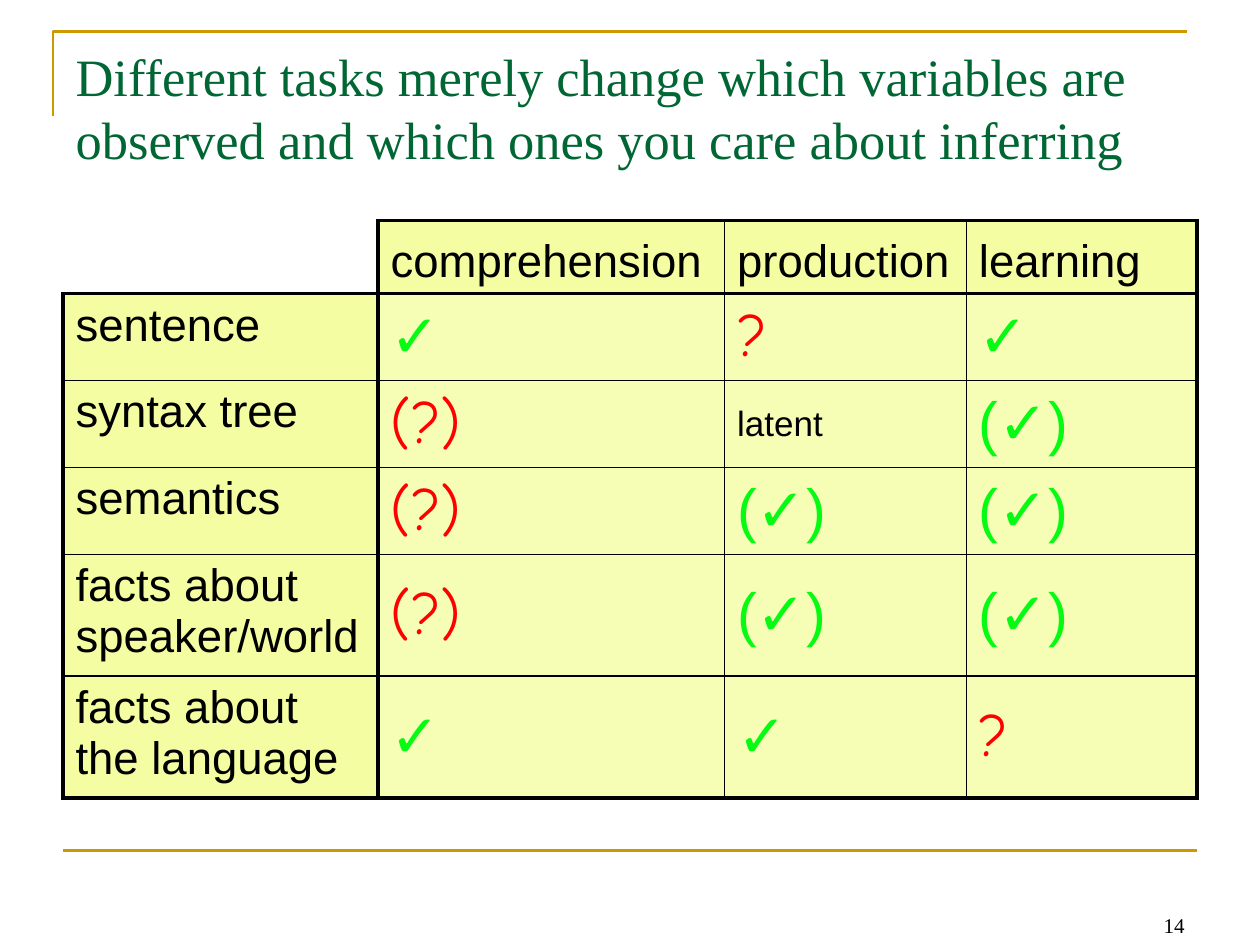
from lxml import etree
from pptx import Presentation
from pptx import util as u
from pptx.dml.color import RGBColor
from pptx.enum import shapes, text
from pptx.oxml.ns import qn

BLACK = RGBColor(0x00, 0x00, 0x00)
WHITE = RGBColor(0xFF, 0xFF, 0xFF)
GOLD = RGBColor(0xCC, 0x99, 0x00)
TITLE_GREEN = RGBColor(0x00, 0x66, 0x33)
CHECK_GREEN = RGBColor(0x05, 0xFB, 0x11)
RED = RGBColor(0xFF, 0x00, 0x00)
HEADING_FILL = RGBColor(0xF4, 0xFD, 0xA1)
BODY_FILL = RGBColor(0xF6, 0xFD, 0xB5)

SERIF, SANS, COMIC = "Times New Roman", "Arial", "Comic Neue"
THIN, THICK = 1, 2.25

TASKS = [
    ["", "comprehension", "production", "learning"],
    ["sentence", "✓", "?", "✓"],
    ["syntax tree", "(?)", "latent", "(✓)"],
    ["semantics", "(?)", "(✓)", "(✓)"],
    ["facts about speaker/world", "(?)", "(✓)", "(✓)"],
    ["facts about the language", "✓", "✓", "?"],
]
COLUMN_WIDTHS = [2.5, 2.75, 1.92, 1.83]
ROW_HEIGHTS = [0.58, 0.69, 0.69, 0.69, 0.9, 0.9]


def mark_style(mark):
    """Size, font and colour of a body cell's text."""
    if "✓" in mark:
        return 34, SANS, CHECK_GREEN
    if "?" in mark:
        return 34, COMIC, RED
    return 20, SANS, BLACK


def cell_borders(row, col):
    """Border widths: thick around the headings and the whole table."""
    last_row, last_col = len(ROW_HEIGHTS) - 1, len(COLUMN_WIDTHS) - 1
    corner = row == col == 0
    return {
        "L": 0 if corner else THICK if col <= 1 else THIN,
        "R": THICK if col in (0, last_col) else THIN,
        "T": 0 if corner else THICK if row <= 1 else THIN,
        "B": THICK if row in (0, last_row) else THIN,
    }


class SlideBuilder:
    def __init__(self, slide):
        self.slide = slide

    def add_words(self, frame, words, size, font, color, align=text.PP_ALIGN.LEFT):
        frame.word_wrap = True
        paragraph = frame.paragraphs[0]
        paragraph.alignment = align
        run = paragraph.add_run()
        run.text = words
        run.font.size = u.Pt(size)
        run.font.name = font
        run.font.color.rgb = color

    def title(self, words, left, top, width, height):
        title = self.slide.shapes.title
        title.left, title.top = u.Inches(left), u.Inches(top)
        title.width, title.height = u.Inches(width), u.Inches(height)
        title.text_frame.vertical_anchor = text.MSO_ANCHOR.TOP
        self.add_words(title.text_frame, words, 30, SERIF, TITLE_GREEN)

    def page_number(self, number, left, top, width, height):
        box = self.slide.shapes.add_textbox(
            u.Inches(left), u.Inches(top), u.Inches(width), u.Inches(height))
        box.text_frame.vertical_anchor = text.MSO_ANCHOR.BOTTOM
        self.add_words(box.text_frame, number, 12, SERIF, BLACK, text.PP_ALIGN.RIGHT)

    def rule(self, x1, x2, y):
        line = self.slide.shapes.add_connector(
            shapes.MSO_CONNECTOR.STRAIGHT,
            u.Inches(x1), u.Inches(y), u.Inches(x2), u.Inches(y))
        line.line.color.rgb = GOLD
        line.line.width = u.Pt(1.5)
        etree.SubElement(line._element.spPr, qn("a:effectLst"))

    def bracket(self, points):
        corners = [(u.Inches(x), u.Inches(y)) for x, y in points]
        builder = self.slide.shapes.build_freeform(*corners[0])
        builder.add_line_segments(corners[1:], close=False)
        outline = builder.convert_to_shape()
        outline.shadow.inherit = False
        outline.fill.background()
        outline.line.color.rgb = GOLD
        outline.line.width = u.Pt(1.5)

    def border(self, cell, widths):
        properties = cell._tc.get_or_add_tcPr()
        for index, side in enumerate("LRTB"):
            line = etree.Element(qn(f"a:ln{side}"), w=str(u.Pt(widths[side])))
            if widths[side]:
                fill = etree.SubElement(line, qn("a:solidFill"))
                etree.SubElement(fill, qn("a:srgbClr"), val=str(BLACK))
            else:
                etree.SubElement(line, qn("a:noFill"))
            properties.insert(index, line)

    def table(self, rows, left, top):
        table = self.slide.shapes.add_table(
            len(rows), len(rows[0]), u.Inches(left), u.Inches(top),
            u.Inches(sum(COLUMN_WIDTHS)), u.Inches(sum(ROW_HEIGHTS))).table
        table.first_row = table.horz_banding = False
        for column, width in zip(table.columns, COLUMN_WIDTHS):
            column.width = u.Inches(width)
        for row, height in zip(table.rows, ROW_HEIGHTS):
            row.height = u.Inches(height)
        for r, row in enumerate(rows):
            for c, words in enumerate(row):
                self.cell(table.cell(r, c), words, r, c)

    def cell(self, cell, words, row, col):
        heading = row == 0 or col == 0
        cell.fill.solid()
        cell.fill.fore_color.rgb = (
            WHITE if not words else HEADING_FILL if heading else BODY_FILL)
        if row == 0:
            cell.vertical_anchor = text.MSO_ANCHOR.BOTTOM
        elif col == 0:
            cell.vertical_anchor = text.MSO_ANCHOR.TOP
        else:
            cell.vertical_anchor = text.MSO_ANCHOR.MIDDLE
        if words:
            style = (26, SANS, BLACK) if heading else mark_style(words)
            self.add_words(cell.text_frame, words, *style)
        self.border(cell, cell_borders(row, col))


def main():
    deck = Presentation()
    deck.slide_width, deck.slide_height = u.Inches(10), u.Inches(7.5)
    page = SlideBuilder(deck.slides.add_slide(deck.slide_layouts[5]))
    page.bracket([(0.42, 0.92), (0.42, 0.25), (9.42, 0.25)])
    page.rule(0.5, 9.5, 6.75)
    page.page_number("14", 8.75, 6.99, 0.75, 0.5)
    page.title("Different tasks merely change which variables are observed "
               "and which ones you care about inferring", 0.5, 0.3, 9, 1.25)
    page.table(TASKS, 0.5, 1.75)
    deck.save("out.pptx")


if __name__ == "__main__":
    main()
